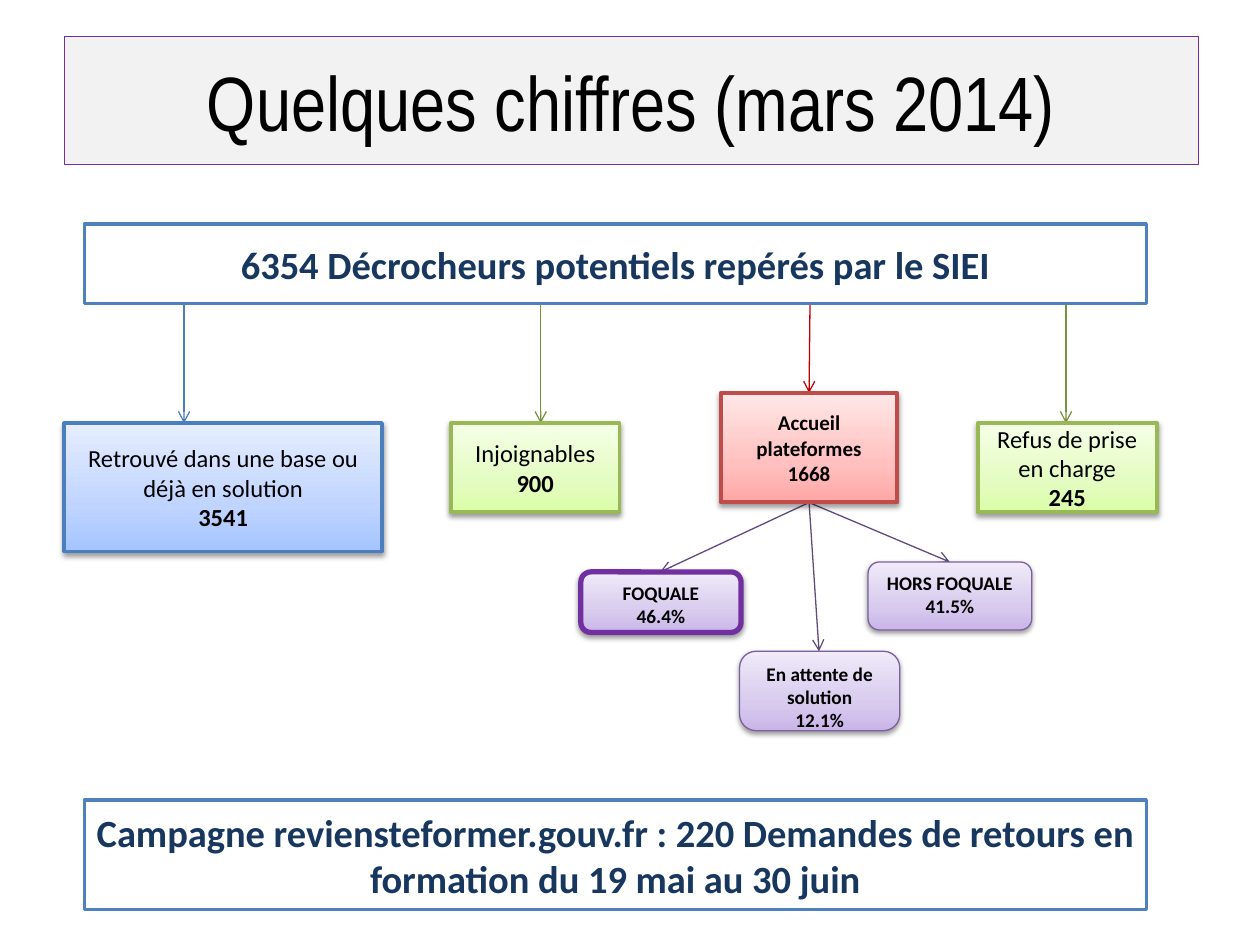
"""Build the slide of school drop-out figures for March 2014."""
from copy import deepcopy
from typing import NamedTuple, Optional

from lxml.etree import SubElement
from pptx import Presentation
from pptx.dml.color import RGBColor
from pptx.enum.shapes import MSO_CONNECTOR, MSO_SHAPE
from pptx.enum.text import MSO_ANCHOR, PP_ALIGN
from pptx.oxml.ns import qn
from pptx.util import Cm, Pt

BLACK = RGBColor(0x00, 0x00, 0x00)
WHITE = RGBColor(0xFF, 0xFF, 0xFF)
GREY = RGBColor(0xF2, 0xF2, 0xF2)
NAVY = RGBColor(0x17, 0x37, 0x5E)
BANNER_BLUE = RGBColor(0x4F, 0x81, 0xBD)
BLUE = RGBColor(0x4B, 0x7E, 0xBC)
GREEN = RGBColor(0x98, 0xB9, 0x55)
DARK_GREEN = RGBColor(0x77, 0x93, 0x3C)
RED = RGBColor(0xBF, 0x4C, 0x48)
DARK_RED = RGBColor(0xC0, 0x00, 0x00)
PURPLE = RGBColor(0x7D, 0x60, 0xA0)
DARK_PURPLE = RGBColor(0x60, 0x4A, 0x7B)
VIVID_PURPLE = RGBColor(0x70, 0x30, 0xA0)

BLUE_FADE = (RGBColor(0xA4, 0xC4, 0xFF), RGBColor(0xBF, 0xD4, 0xFF), RGBColor(0xE6, 0xEE, 0xFF))
GREEN_FADE = (RGBColor(0xDA, 0xFD, 0xA7), RGBColor(0xE4, 0xFC, 0xC2), RGBColor(0xF5, 0xFF, 0xE7))
RED_FADE = (RGBColor(0xFF, 0xA6, 0xA5), RGBColor(0xFF, 0xC0, 0xBF), RGBColor(0xFF, 0xE7, 0xE7))
PURPLE_FADE = (RGBColor(0xC9, 0xB5, 0xE8), RGBColor(0xD8, 0xCB, 0xEE), RGBColor(0xF0, 0xEA, 0xF9))
FADE_POSITIONS = (0, 0.35, 1)

BANNER_BOTTOM = 6.12
ROW_TOP = 8.53
HUB = (16.31, 10.13)


class Style(NamedTuple):
    """Look shared by boxes of one kind."""
    line: RGBColor
    line_width: float
    size: int
    fade: Optional[tuple] = None
    text_color: RGBColor = BLACK
    bold_label: bool = True
    rounded: bool = False


class Box(NamedTuple):
    """A box with its place in centimetres and its paragraphs."""
    left: float
    top: float
    width: float
    height: float
    style: Style
    lines: tuple
    corner: float = 0.167


class Arrow(NamedTuple):
    """An arrow between two points in centimetres."""
    start: tuple
    end: tuple
    color: RGBColor


BANNER = Style(BANNER_BLUE, 2, 22, text_color=NAVY)
FOUND = Style(BLUE, 2.25, 14, BLUE_FADE, bold_label=False)
UNREACHED = Style(GREEN, 2.25, 14, GREEN_FADE, bold_label=False)
WELCOMED = Style(RED, 2.25, 12, RED_FADE)
OUTCOME = Style(PURPLE, 0.75, 11, PURPLE_FADE, rounded=True)
KEY_OUTCOME = OUTCOME._replace(line=VIVID_PURPLE, line_width=3)

BOXES = (
    Box(1.3, ROW_TOP, 6.4, 2.59, FOUND, ("Retrouvé dans une base ou déjà en solution", "3541")),
    Box(19.71, ROW_TOP, 3.61, 1.8, UNREACHED, ("Refus de prise en charge", "245")),
    Box(9.09, ROW_TOP, 3.4, 1.8, UNREACHED, ("Injoignables", "900")),
    Box(14.53, 7.92, 3.56, 2.21, WELCOMED, ("Accueil plateformes", "1668")),
    Box(11.71, 11.53, 3.23, 1.22, KEY_OUTCOME, ("FOQUALE", "46.4%")),
    Box(17.5, 11.33, 3.3, 1.37, OUTCOME, ("HORS FOQUALE", "41.5%")),
    Box(14.91, 13.13, 3.23, 1.6, OUTCOME, ("En attente de solution", "12.1%"), 0.206),
    Box(1.7, 4.52, 21.41, 1.6, BANNER, ("6354 Décrocheurs potentiels repérés par le SIEI",)),
    Box(1.7, 16.13, 21.41, 2.21, BANNER,
        ("Campagne reviensteformer.gouv.fr : 220 Demandes de retours "
         "en formation du 19 mai au 30 juin",)),
)

ARROWS = (
    Arrow((3.71, 5.72), (3.71, ROW_TOP), BLUE),
    Arrow((10.9, BANNER_BOTTOM), (10.9, ROW_TOP), DARK_GREEN),
    Arrow((16.33, BANNER_BOTTOM), (16.31, 7.92), DARK_RED),
    Arrow((21.49, BANNER_BOTTOM), (21.49, ROW_TOP), DARK_GREEN),
    Arrow(HUB, (16.51, 13.13), DARK_PURPLE),
    Arrow(HUB, (13.31, 11.53), DARK_PURPLE),
    Arrow(HUB, (19.15, 11.33), DARK_PURPLE),
)


def fill_plain(shape, color: RGBColor, line: RGBColor, width: float) -> None:
    """Give a shape a solid fill and an outline."""
    shape.fill.solid()
    shape.fill.fore_color.rgb = color
    shape.line.color.rgb = line
    shape.line.width = Pt(width)


def fill_fade(shape, colors: tuple) -> None:
    """Give a shape a three-stop upward gradient."""
    shape.fill.gradient()
    shape.fill.gradient_angle = 90
    stop_list = shape.element.spPr.find(qn("a:gradFill")).find(qn("a:gsLst"))
    stop_list.append(deepcopy(stop_list[0]))
    for stop, color, position in zip(shape.fill.gradient_stops, colors, FADE_POSITIONS):
        stop.color.rgb = color
        stop.position = position


def add_soft_shadow(shape) -> None:
    """Put a soft black shadow below a shape."""
    effects = shape.element.spPr.find(qn("a:effectLst"))
    shadow = SubElement(effects, qn("a:outerShdw"), blurRad=str(Pt(3.1)), dist=str(Pt(1.6)),
                        dir="5400000", rotWithShape="0")
    color = SubElement(shadow, qn("a:srgbClr"), val="000000")
    SubElement(color, qn("a:alpha"), val="38000")


def format_paragraph(para, size: int, font: str, color: RGBColor, bold: bool) -> None:
    """Centre a paragraph and format its runs."""
    para.alignment = PP_ALIGN.CENTER
    for span in para.runs:
        span.font.size = Pt(size)
        span.font.name = font
        span.font.color.rgb = color
        span.font.bold = bold


def draw_box(page, box: Box) -> None:
    """Draw one box with its text."""
    style = box.style
    kind = MSO_SHAPE.ROUNDED_RECTANGLE if style.rounded else MSO_SHAPE.RECTANGLE
    shape = page.shapes.add_shape(kind, Cm(box.left), Cm(box.top), Cm(box.width), Cm(box.height))
    shape.shadow.inherit = False
    fill_plain(shape, WHITE, style.line, style.line_width)
    if style.fade:
        fill_fade(shape, style.fade)
        add_soft_shadow(shape)
    if style.rounded:
        shape.adjustments[0] = box.corner
    frame = shape.text_frame
    frame.word_wrap = True
    frame.vertical_anchor = MSO_ANCHOR.TOP if style.rounded else MSO_ANCHOR.MIDDLE
    frame.text = "\n".join(box.lines)
    for index, para in enumerate(frame.paragraphs):
        format_paragraph(para, style.size, "Calibri", style.text_color,
                         style.bold_label or index > 0)


def draw_arrow(page, arrow: Arrow) -> None:
    """Draw one thin line with an open arrowhead."""
    points = [Cm(value) for value in arrow.start + arrow.end]
    connector = page.shapes.add_connector(MSO_CONNECTOR.STRAIGHT, *points)
    connector.line.color.rgb = arrow.color
    connector.line.width = Pt(0.75)
    SubElement(connector.line._get_or_add_ln(), qn("a:tailEnd"), type="arrow")
    SubElement(connector.element.spPr, qn("a:effectLst"))


def draw_title(page) -> None:
    """Place and format the slide title."""
    title = page.shapes.title
    title.left, title.top, title.width, title.height = Cm(1.3), Cm(0.74), Cm(22.86), Cm(2.57)
    fill_plain(title, GREY, VIVID_PURPLE, 0.75)
    title.text_frame.text = "Quelques chiffres (mars 2014)"
    title.text_frame.vertical_anchor = MSO_ANCHOR.MIDDLE
    format_paragraph(title.text_frame.paragraphs[0], 44, "Arial Narrow", BLACK, False)


def main() -> None:
    """Build and save the deck."""
    deck = Presentation()
    deck.slide_width, deck.slide_height = Cm(25.4), Cm(19.05)
    page = deck.slides.add_slide(deck.slide_layouts[5])
    draw_title(page)
    for arrow in ARROWS:
        draw_arrow(page, arrow)
    for box in BOXES:
        draw_box(page, box)
    deck.save("out.pptx")


if __name__ == "__main__":
    main()
